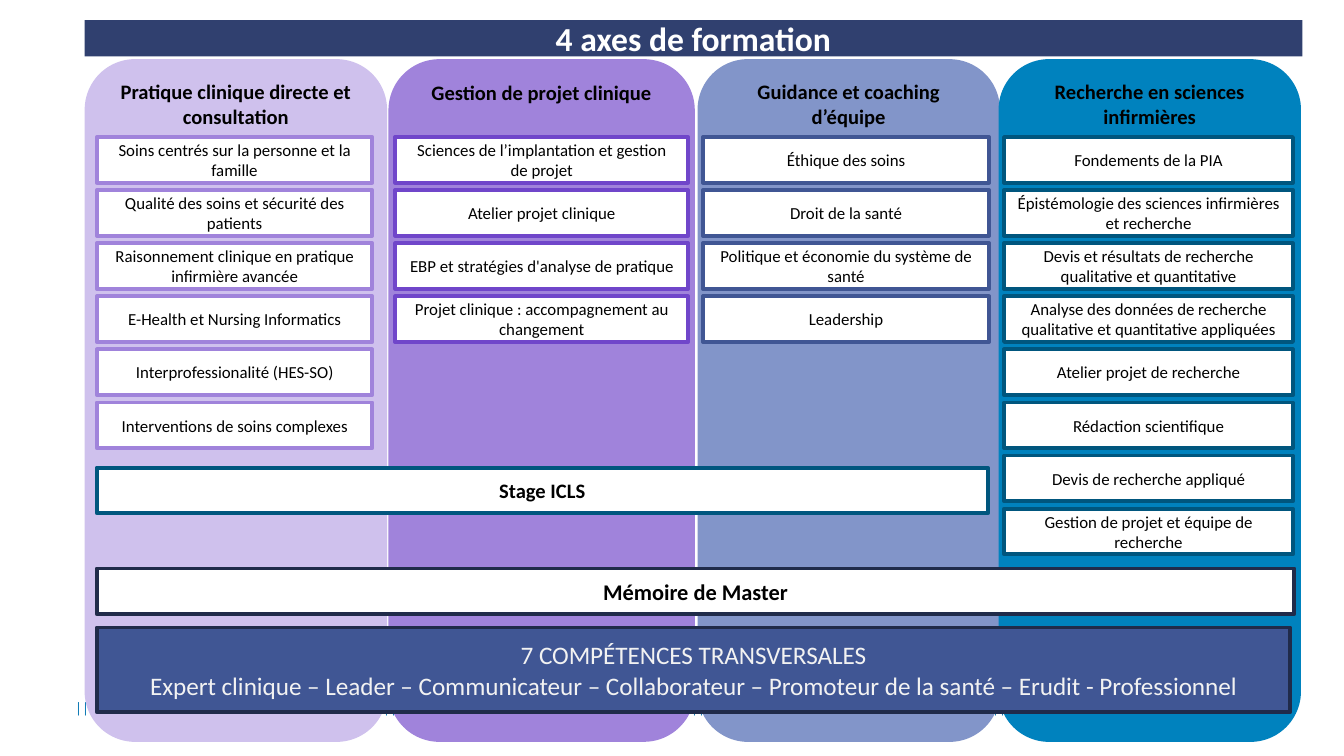
from dataclasses import dataclass

from pptx import Presentation
from pptx.dml.color import RGBColor
from pptx.enum.shapes import MSO_SHAPE as Preset
from pptx.enum.text import MSO_ANCHOR as Anchor, MSO_AUTO_SIZE as AutoSize, PP_ALIGN as Align
from pptx.util import Emu, Pt

EMU_PER_PX = 4572
FONT = "Calibri"
COURSE_TOP, COURSE_PITCH, BAR_HEIGHT = 204, 79, 68
COLUMN_TOP, COLUMN_HEIGHT = 88, 1016


@dataclass(frozen=True)
class Box:
    left: int
    top: int
    width: int
    height: int


@dataclass(frozen=True)
class TextStyle:
    size: float
    color: str = "000000"
    bold: bool = False
    align: Align = Align.CENTER
    anchor: Anchor = Anchor.MIDDLE
    inset_x: int = 20
    inset_y: int = 10


@dataclass(frozen=True)
class Axis:
    heading: str
    left: int
    width: int
    fill: str
    course_left: int
    course_width: int
    course_line: str
    courses: tuple[str, ...]


@dataclass(frozen=True)
class Band:
    lines: tuple[str, ...]
    box: Box
    fill: str
    line: str
    style: TextStyle


HEADING = TextStyle(11, bold=True, anchor=Anchor.TOP, inset_x=14, inset_y=8)
COURSE = TextStyle(9)
TITLE = TextStyle(18, "FFFFFF", True, inset_x=14, inset_y=8)
TICKS = TextStyle(8.1, "0F7BB6", align=Align.LEFT, anchor=Anchor.TOP)

AXES = (
    Axis("Pratique clinique directe et consultation", 126, 450, "CFC1ED", 144, 410, "A083DB", (
        "Soins centrés sur la personne et la famille",
        "Qualité des soins et sécurité des patients",
        "Raisonnement clinique en pratique infirmière avancée",
        "E-Health et Nursing Informatics",
        "Interprofessionalité (HES-SO)",
        "Interventions de soins complexes",
    )),
    Axis("Gestion de projet clinique", 578, 456, "A083DB", 588, 436, "7046CA", (
        "Sciences de l’implantation et gestion de projet",
        "Atelier projet clinique",
        "EBP et stratégies d'analyse de pratique",
        "Projet clinique : accompagnement au changement",
    )),
    Axis("Guidance et coaching d’équipe", 1038, 450, "8295C9", 1046, 426, "405694", (
        "Éthique des soins",
        "Droit de la santé",
        "Politique et économie du système de santé",
        "Leadership",
    )),
    Axis("Recherche en sciences infirmières", 1486, 450, "0082BE", 1494, 430, "00567E", (
        "Fondements de la PIA",
        "Épistémologie des sciences infirmières et recherche",
        "Devis et résultats de recherche qualitative et quantitative",
        "Analyse des données de recherche qualitative et quantitative appliquées",
        "Atelier projet de recherche",
        "Rédaction scientifique",
        "Devis de recherche appliqué",
        "Gestion de projet et équipe de recherche",
    )),
)

BANDS = (
    Band(("Stage ICLS",), Box(144, 696, 1326, BAR_HEIGHT), "FFFFFF", "00567E",
         TextStyle(11, bold=True)),
    Band(("Mémoire de Master",), Box(144, 846, 1782, BAR_HEIGHT), "FFFFFF", "202B4A",
         TextStyle(12, bold=True)),
    Band(("7 COMPÉTENCES TRANSVERSALES",
          "Expert clinique – Leader – Communicateur – Collaborateur – "
          "Promoteur de la santé – Erudit - Professionnel"),
         Box(144, 934, 1776, 126), "405694", "202B4A",
         TextStyle(13.5, "F2F2F2", inset_x=14, inset_y=8)),
)


def px(length: int) -> Emu:
    return Emu(length * EMU_PER_PX)


def rgb(value: str) -> RGBColor:
    return RGBColor.from_string(value)


def place(box: Box) -> tuple[Emu, ...]:
    return px(box.left), px(box.top), px(box.width), px(box.height)


def write(shape, lines: tuple[str, ...], style: TextStyle) -> None:
    frame = shape.text_frame
    frame.word_wrap = True
    frame.auto_size = AutoSize.NONE
    frame.vertical_anchor = style.anchor
    frame.margin_left = frame.margin_right = px(style.inset_x)
    frame.margin_top = frame.margin_bottom = px(style.inset_y)
    for index, line in enumerate(lines):
        paragraph = frame.add_paragraph() if index else frame.paragraphs[0]
        paragraph.alignment = style.align
        run = paragraph.add_run()
        run.text = line
        run.font.name = FONT
        run.font.size = Pt(style.size)
        run.font.bold = style.bold
        run.font.color.rgb = rgb(style.color)


def draw_panel(slide, preset: Preset, box: Box, fill: str, line: str | None,
               lines: tuple[str, ...], style: TextStyle) -> None:
    panel = slide.shapes.add_shape(preset, *place(box))
    panel.shadow.inherit = False
    panel.fill.solid()
    panel.fill.fore_color.rgb = rgb(fill)
    if line:
        panel.line.color.rgb = rgb(line)
        panel.line.width = Pt(2)
    else:
        panel.line.fill.background()
    write(panel, lines, style)


def draw_axis(slide, axis: Axis) -> None:
    column = Box(axis.left, COLUMN_TOP, axis.width, COLUMN_HEIGHT)
    draw_panel(slide, Preset.ROUNDED_RECTANGLE, column, axis.fill, None, (axis.heading,), HEADING)
    for row, course in enumerate(axis.courses):
        box = Box(axis.course_left, COURSE_TOP + row * COURSE_PITCH, axis.course_width, BAR_HEIGHT)
        draw_panel(slide, Preset.RECTANGLE, box, "FFFFFF", axis.course_line, (course,), COURSE)


def draw_title(slide) -> None:
    title = slide.shapes.title
    title.left, title.top, title.width, title.height = place(Box(126, 30, 1812, 54))
    title.fill.solid()
    title.fill.fore_color.rgb = rgb("30406F")
    write(title, ("4 axes de formation",), TITLE)


def main() -> None:
    deck = Presentation()
    deck.slide_width, deck.slide_height = px(2000), px(1125)
    slide = deck.slides.add_slide(deck.slide_layouts[5])
    draw_title(slide)
    ticks = slide.shapes.add_textbox(*place(Box(92, 1030, 1656, 48)))
    write(ticks, ("|" * 150,), TICKS)
    for axis in AXES:
        draw_axis(slide, axis)
    for band in BANDS:
        draw_panel(slide, Preset.RECTANGLE, band.box, band.fill, band.line, band.lines, band.style)
    deck.save("out.pptx")


if __name__ == "__main__":
    main()
